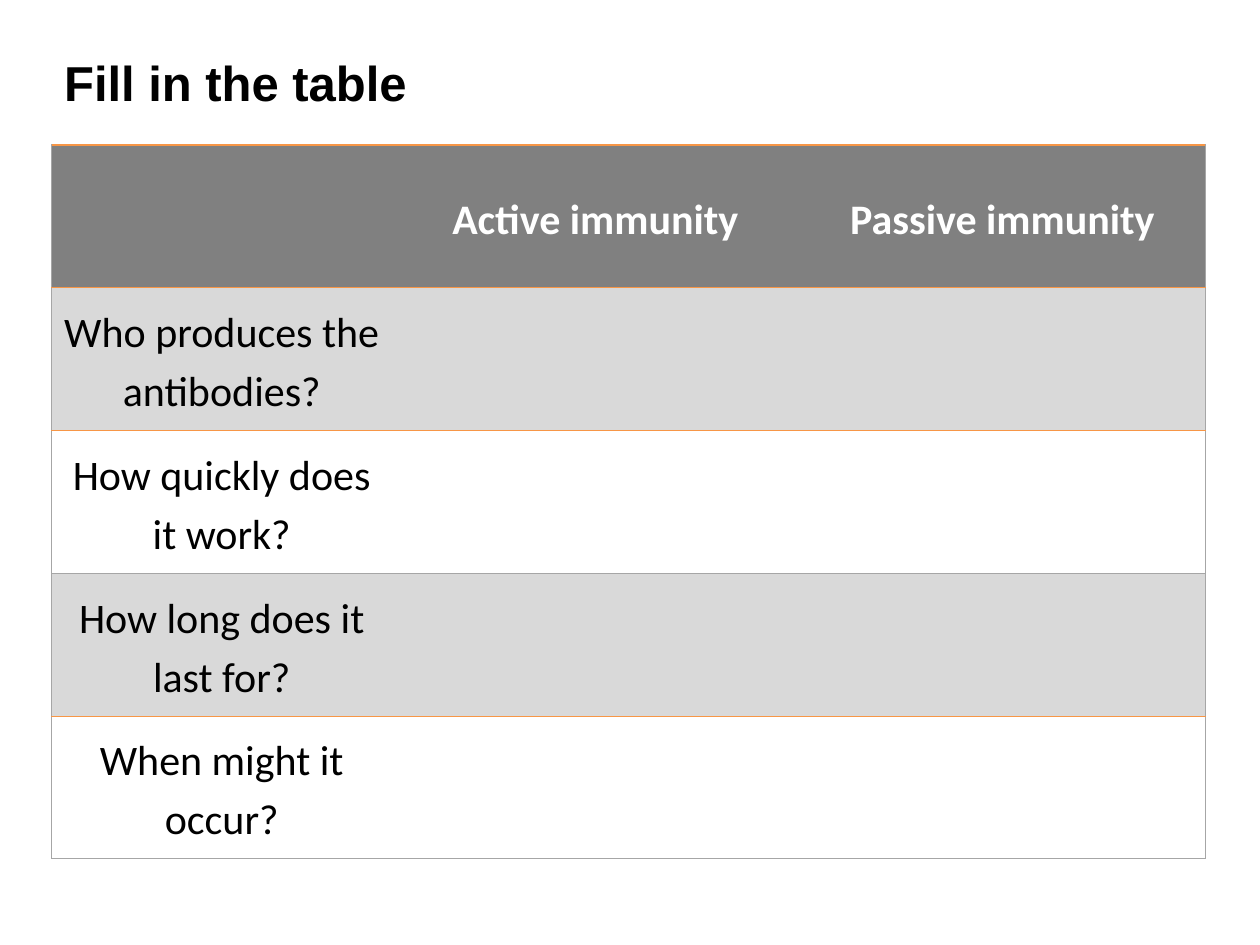
from dataclasses import dataclass
from typing import Optional

from lxml.etree import SubElement
from pptx import Presentation
from pptx.dml.color import RGBColor
from pptx.enum.text import MSO_ANCHOR, PP_ALIGN
from pptx.oxml.ns import qn
from pptx.util import Pt

BLACK = RGBColor(0x00, 0x00, 0x00)
WHITE = RGBColor(0xFF, 0xFF, 0xFF)
HEADER_GREY = RGBColor(0x80, 0x80, 0x80)
BAND_GREY = RGBColor(0xD9, 0xD9, 0xD9)
LINE_GREY = RGBColor(0xA6, 0xA6, 0xA6)
ORANGE = RGBColor(0xF7, 0x96, 0x46)

LEFT, WIDTH = 29.5, 659.6
COLUMN_WIDTHS = (194.4, 232.6, 232.6)
ROW_HEIGHT = 81.6


@dataclass(frozen=True)
class Line:
    color: RGBColor
    width: float


@dataclass(frozen=True)
class Row:
    texts: tuple[str, str, str]
    fill: RGBColor
    top: Line
    is_header: bool = False


THICK_ORANGE = Line(ORANGE, 1)
THIN_ORANGE = Line(ORANGE, 0.5)
THIN_GREY = Line(LINE_GREY, 0.5)

ROWS = (
    Row(("", "Active immunity", "Passive immunity"), HEADER_GREY, THICK_ORANGE, True),
    Row(("Who produces the antibodies?", "", ""), BAND_GREY, THICK_ORANGE),
    Row(("How quickly does it work?", "", ""), WHITE, THICK_ORANGE),
    Row(("How long does it last for?", "", ""), BAND_GREY, THIN_GREY),
    Row(("When might it occur?", "", ""), WHITE, THIN_ORANGE),
)


def set_border(cell, side: str, line: Optional[Line]) -> None:
    """Add one border, in the order L, R, T, B; None leaves the side without a line."""
    properties = cell._tc.get_or_add_tcPr()
    border = SubElement(properties, qn(f"a:ln{side}"))
    if line is None:
        SubElement(border, qn("a:noFill"))
        return
    border.set("w", str(Pt(line.width)))
    fill = SubElement(border, qn("a:solidFill"))
    SubElement(fill, qn("a:srgbClr")).set("val", str(line.color))


def add_title(slide, text: str) -> None:
    title = slide.shapes.title
    title.left, title.top = Pt(LEFT), Pt(26.6)
    title.width, title.height = Pt(WIDTH), Pt(487.4)
    title.fill.solid()
    title.fill.fore_color.rgb = WHITE
    frame = title.text_frame
    frame.text = text
    frame.word_wrap = True
    frame.vertical_anchor = MSO_ANCHOR.TOP
    paragraph = frame.paragraphs[0]
    paragraph.alignment = PP_ALIGN.LEFT
    paragraph.space_after = Pt(6)
    font = paragraph.font
    font.name, font.size, font.bold = "Arial", Pt(28), True
    font.color.rgb = BLACK


def write_cell(cell, text: str, is_header: bool) -> None:
    cell.vertical_anchor = MSO_ANCHOR.MIDDLE
    cell.margin_left = cell.margin_right = Pt(5)
    cell.margin_top = cell.margin_bottom = Pt(0)
    cell.text = text
    paragraph = cell.text_frame.paragraphs[0]
    paragraph.alignment = PP_ALIGN.CENTER
    paragraph.line_spacing = 1.15
    paragraph.space_after = Pt(10 if is_header else 0)
    font = paragraph.font
    font.name, font.size, font.bold = "Calibri", Pt(24), is_header
    font.color.rgb = WHITE if is_header else BLACK


def add_immunity_table(slide, rows: tuple[Row, ...]) -> None:
    frame = slide.shapes.add_table(
        len(rows), len(COLUMN_WIDTHS),
        Pt(LEFT), Pt(82.8), Pt(WIDTH), Pt(ROW_HEIGHT * len(rows)),
    )
    table = frame.table
    table.first_row = table.horz_banding = False
    for column, width in zip(table.columns, COLUMN_WIDTHS):
        column.width = Pt(width)
    last_column = len(COLUMN_WIDTHS) - 1
    bottoms = [row.top for row in rows[1:]] + [THIN_GREY]
    for row_index, (row, bottom) in enumerate(zip(rows, bottoms)):
        table.rows[row_index].height = Pt(ROW_HEIGHT)
        for column_index, text in enumerate(row.texts):
            cell = table.cell(row_index, column_index)
            set_border(cell, "L", THIN_GREY if column_index == 0 else None)
            set_border(cell, "R", THIN_GREY if column_index == last_column else None)
            set_border(cell, "T", row.top)
            set_border(cell, "B", bottom)
            cell.fill.solid()
            cell.fill.fore_color.rgb = row.fill
            if text:
                write_cell(cell, text, row.is_header)


def main() -> None:
    presentation = Presentation()
    presentation.slide_width, presentation.slide_height = Pt(720), Pt(540)
    slide = presentation.slides.add_slide(presentation.slide_layouts[5])
    add_title(slide, "Fill in the table")
    add_immunity_table(slide, ROWS)
    presentation.save("out.pptx")


if __name__ == "__main__":
    main()
